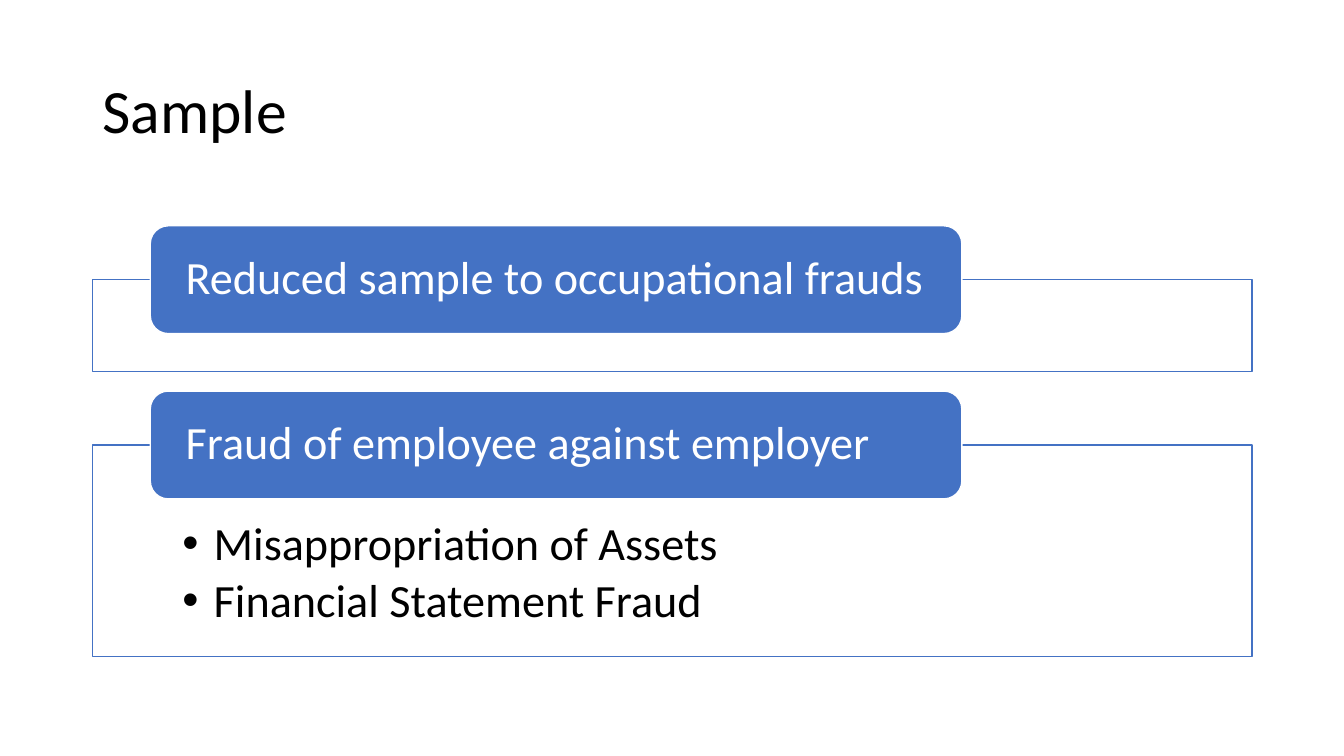
from lxml import etree
from pptx import Presentation
from pptx.dml.color import RGBColor
from pptx.enum.shapes import MSO_SHAPE as Shape
from pptx.enum.text import MSO_ANCHOR as Anchor, PP_ALIGN as Align
from pptx.oxml.ns import qn
from pptx.util import Inches, Pt

COLORS = {"white": "FFFFFF", "blue": "4472C4", "black": "000000"}
LEFT, WIDTH = 0.92, 11.5
HEADER_HEIGHT = 1.07
SECTIONS = [
    ("Reduced sample to occupational frauds", 2.24, 0.91, []),
    ("Fraud of employee against employer", 3.88, 2.1,
     ["Misappropriation of Assets", "Financial Statement Fraud"]),
]


def add_panel(kind, left, top, width, height, fill, line):
    panel = page.shapes.add_shape(
        kind, Inches(left), Inches(top), Inches(width), Inches(height))
    panel.shadow.inherit = False
    panel.fill.solid()
    panel.fill.fore_color.rgb = RGBColor.from_string(COLORS[fill])
    panel.line.color.rgb = RGBColor.from_string(COLORS[line])
    panel.line.width = Pt(1)
    return panel


def write(box, lines, size, color, anchor, insets, after=0):
    frame = box.text_frame
    frame.word_wrap = True
    frame.vertical_anchor = anchor
    frame.margin_left = frame.margin_right = Inches(insets[0])
    frame.margin_top, frame.margin_bottom = Inches(insets[1]), Inches(insets[2])
    for number, line in enumerate(lines):
        para = frame.add_paragraph() if number else frame.paragraphs[0]
        para.alignment = Align.LEFT
        para.line_spacing = 0.9
        para.space_after = Pt(after)
        span = para.add_run()
        span.text = line
        span.font.name = "Calibri"
        span.font.size = Pt(size)
        span.font.color.rgb = RGBColor.from_string(COLORS[color])


deck = Presentation()
deck.slide_width, deck.slide_height = Inches(13.33), Inches(7.5)
page = deck.slides.add_slide(deck.slide_layouts[6])

title = page.shapes.add_textbox(Inches(LEFT), Inches(0.4), Inches(WIDTH), Inches(1.45))
write(title, ["Sample"], 44, "black", Anchor.MIDDLE, (0.1, 0.05, 0.05))

for heading, top, height, bullets in SECTIONS:
    body = add_panel(Shape.RECTANGLE, LEFT, top + HEADER_HEIGHT / 2, WIDTH, height,
                     "white", "blue")
    tint = body.fill._xPr.find(qn("a:solidFill"))[0]
    etree.SubElement(tint, qn("a:alpha"), val="90000")
    if bullets:
        write(body, bullets, 33, "black", Anchor.TOP, (0.89, 0.75, 0.26), after=5)
        for para in body.text_frame.paragraphs:
            layout = para._p.get_or_add_pPr()
            layout.set("lvl", "1")
            layout.set("marL", str(Inches(0.31)))
            layout.set("indent", str(-Inches(0.31)))
            etree.SubElement(layout, qn("a:buFont"), typeface="Arial")
            etree.SubElement(layout, qn("a:buChar"), char="•")

    header = add_panel(Shape.ROUNDED_RECTANGLE, 1.49, top, 8.05, HEADER_HEIGHT,
                       "blue", "white")
    write(header, [heading], 33, "white", Anchor.MIDDLE, (0.3, 0, 0))

deck.save("out.pptx")
